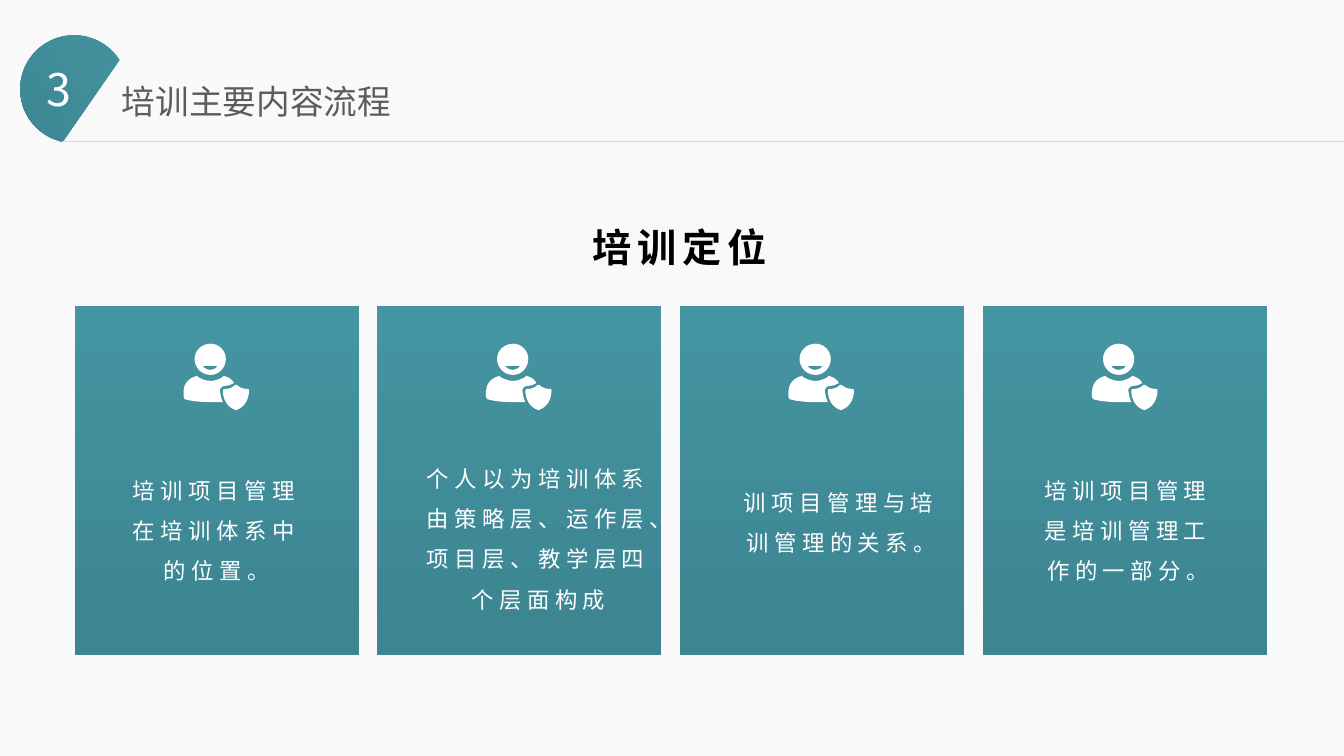
from dataclasses import dataclass

from lxml import etree
from pptx import Presentation
from pptx.dml.color import RGBColor
from pptx.dml.fill import FillFormat
from pptx.enum.shapes import MSO_CONNECTOR, MSO_SHAPE
from pptx.enum.text import MSO_ANCHOR, MSO_AUTO_SIZE, PP_ALIGN
from pptx.oxml.ns import qn
from pptx.shapes.autoshape import Shape
from pptx.slide import Slide
from pptx.util import Pt

CHORD, RECTANGLE = MSO_SHAPE.CHORD, MSO_SHAPE.RECTANGLE
STRAIGHT = MSO_CONNECTOR.STRAIGHT
LEFT, CENTER = PP_ALIGN.LEFT, PP_ALIGN.CENTER
TOP = MSO_ANCHOR.TOP
GROW = MSO_AUTO_SIZE.SHAPE_TO_FIT_TEXT

PX = 9144  # EMU per px, 100 px to the inch
SLIDE_WIDTH, SLIDE_HEIGHT = 1333, 750
TITLE_ONLY = 5

Point = tuple[int, int]


@dataclass(frozen=True)
class Theme:
    font: str = "Noto Sans CJK JP"
    background: str = "F9F9F9"
    teal: tuple[str, str] = ("4594A1", "3C8591")
    title: tuple[str, str] = ("5C5C5C", "2F2F31")
    rule: str = "D9D9D9"
    white: str = "FFFFFF"
    black: str = "000000"
    title_size: int = 24
    number_size: int = 32
    heading_size: int = 28
    caption_size: int = 16
    tracking: int = 4
    rule_width: float = 0.5


@dataclass(frozen=True)
class Box:
    left: int
    top: int
    width: int
    height: int

    def emu(self) -> tuple[int, int, int, int]:
        return self.left * PX, self.top * PX, self.width * PX, self.height * PX


@dataclass(frozen=True)
class TextStyle:
    size: int
    color: str | tuple[str, str]
    align: PP_ALIGN = LEFT
    line_spacing: float = 1.0
    bold: bool = False
    tracking: int = 0


@dataclass(frozen=True)
class Card:
    caption: str
    caption_box: Box


@dataclass(frozen=True)
class Contour:
    """A closed outline: a start, then (control, control, end) curves or (end,) lines."""
    start: Point
    segments: tuple[tuple[Point, ...], ...]


THEME = Theme()
CAPTION = TextStyle(THEME.caption_size, THEME.white, CENTER, 1.5, tracking=THEME.tracking)
HEADING = TextStyle(THEME.heading_size, THEME.black, CENTER, 1.5, True, THEME.tracking)
NUMBER = TextStyle(THEME.number_size, THEME.white)
TITLE = TextStyle(THEME.title_size, THEME.title)

FIRST_CARD = Box(74, 304, 282, 346)
CARDS_SPAN = 901  # from the first card's left to the last card's left
ICON_OFFSET, ICON_TOP = 108, 341
CARDS = (
    Card("培训项目管理在培训体系中的位置。", Box(109, 455, 212, 127)),
    Card("个人以为培训体系由策略层、运作层、项目层、教学层四个层面构成", Box(410, 443, 248, 167)),
    Card("训项目管理与培训管理的关系。", Box(725, 467, 219, 87)),
    Card("培训项目管理是培训管理工作的一部分。", Box(1013, 455, 212, 127)),
)

HEAD = Contour((27, 31), (
    ((35, 31), (42, 24), (42, 15)), ((42, 7), (35, 0), (27, 0)),
    ((18, 0), (11, 7), (11, 15)), ((11, 24), (18, 31), (27, 31)),
))
SMILE = Contour((34, 22), (
    ((33, 24), (30, 26), (27, 26)), ((23, 26), (20, 24), (19, 22)), ((34, 22),),
))
SHIELD = Contour((65, 46), (
    ((65, 55), (61, 63), (52, 66)), ((43, 63), (39, 55), (39, 46)),
    ((39, 45), (40, 45), (40, 45)), ((45, 45), (48, 44), (51, 41)),
    ((52, 41), (52, 41), (53, 41)), ((56, 44), (60, 45), (64, 45)),
    ((64, 45), (65, 45), (65, 46)),
))
BODY = Contour((36, 46), (
    ((37, 51), (37, 54), (39, 58)), ((35, 58), (31, 58), (27, 58)),
    ((12, 58), (4, 56), (1, 55)), ((1, 54), (0, 53), (0, 53)),
    ((0, 47),), ((0, 40), (6, 33), (14, 32)),
    ((14, 32), (14, 32), (14, 33)), ((18, 35), (22, 37), (27, 37)),
    ((31, 37), (36, 35), (39, 33)), ((39, 32), (40, 32), (40, 32)),
    ((44, 33), (48, 35), (50, 39)), ((50, 39), (50, 39), (50, 39)),
    ((47, 41), (44, 42), (41, 42)), ((41, 42), (41, 42), (41, 42)),
    ((40, 42),), ((39, 42), (38, 43), (38, 43)), ((37, 44), (36, 45), (36, 46)),
))
PERSON_ICON = (HEAD, SMILE, SHIELD, BODY)


def paint(fill: FillFormat, color: str | tuple[str, str], angle: int = 270) -> None:
    """Fill with one colour, or with a gradient for a pair of colours."""
    if isinstance(color, str):
        fill.solid()
        fill.fore_color.rgb = RGBColor.from_string(color)
        return
    fill.gradient()
    fill.gradient_angle = angle
    for stop, stop_color in zip(fill.gradient_stops, color):
        stop.color.rgb = RGBColor.from_string(stop_color)


def apply_format(target: object, values: dict[str, object]) -> None:
    for name, value in values.items():
        setattr(target, name, value)


def write_text(shape: Shape, text: str, style: TextStyle) -> None:
    frame = shape.text_frame
    apply_format(frame, {"word_wrap": True, "auto_size": GROW, "vertical_anchor": TOP})
    paragraph = frame.paragraphs[0]
    apply_format(paragraph, {"alignment": style.align, "line_spacing": style.line_spacing})
    run = paragraph.add_run()
    run.text = text
    apply_format(run.font, {"size": Pt(style.size), "bold": style.bold, "name": THEME.font})
    paint(run.font.fill, style.color, angle=180)
    properties = run._r.get_or_add_rPr()
    etree.SubElement(properties, qn("a:ea"), typeface=THEME.font)
    if style.tracking:
        properties.set("spc", str(style.tracking * 100))


def add_text(slide: Slide, box: Box, text: str, style: TextStyle) -> None:
    write_text(slide.shapes.add_textbox(*box.emu()), text, style)


def add_teal_shape(slide: Slide, kind: MSO_SHAPE, box: Box, rotation: float = 0) -> None:
    shape = slide.shapes.add_shape(kind, *box.emu())
    shape.rotation = rotation
    shape.shadow.inherit = False
    shape.line.fill.background()
    paint(shape.fill, THEME.teal)


def bend_segments(icon: Shape, segments: list[tuple[Point, ...]]) -> None:
    """Turn the straight segments that have control points into cubic curves."""
    for element, segment in zip(list(icon._element.iter(qn("a:lnTo"))), segments):
        controls = segment[:-1]
        if controls:
            element.tag = qn("a:cubicBezTo")
        for position, (x, y) in enumerate(controls):
            element.insert(position, etree.Element(qn("a:pt"), x=str(x), y=str(y)))


def add_person_icon(slide: Slide, left: int, top: int) -> None:
    builder = slide.shapes.build_freeform(*PERSON_ICON[0].start, scale=PX)
    for index, contour in enumerate(PERSON_ICON):
        if index:
            builder.move_to(*contour.start)
        builder.add_line_segments([segment[-1] for segment in contour.segments], close=True)
    icon = builder.convert_to_shape(left * PX, top * PX)
    bend_segments(icon, [segment for contour in PERSON_ICON for segment in contour.segments])
    icon.shadow.inherit = False
    icon.line.fill.background()
    paint(icon.fill, THEME.white)


def add_header(slide: Slide) -> None:
    add_teal_shape(slide, CHORD, Box(20, 35, 107, 107), rotation=57.3)
    rule = slide.shapes.add_connector(STRAIGHT, 62 * PX, 140 * PX, SLIDE_WIDTH * PX, 140 * PX)
    rule.line.width = Pt(THEME.rule_width)
    paint(rule.line.fill, THEME.rule)
    etree.SubElement(rule._element.spPr, qn("a:effectLst"))
    title = slide.shapes.title
    title_place = zip(("left", "top", "width", "height"), Box(111, 75, 419, 50).emu())
    apply_format(title, dict(title_place))
    write_text(title, "培训主要内容流程", TITLE)
    add_text(slide, Box(36, 56, 52, 64), "3", NUMBER)


def add_card(slide: Slide, index: int, card: Card) -> None:
    left = FIRST_CARD.left + CARDS_SPAN * index // (len(CARDS) - 1)
    box = Box(left, FIRST_CARD.top, FIRST_CARD.width, FIRST_CARD.height)
    add_teal_shape(slide, RECTANGLE, box)
    add_person_icon(slide, left + ICON_OFFSET, ICON_TOP)
    add_text(slide, card.caption_box, card.caption, CAPTION)


def main() -> None:
    presentation = Presentation()
    presentation.slide_width = SLIDE_WIDTH * PX
    presentation.slide_height = SLIDE_HEIGHT * PX
    slide = presentation.slides.add_slide(presentation.slide_layouts[TITLE_ONLY])
    paint(slide.background.fill, THEME.background)
    add_header(slide)
    add_text(slide, Box(553, 193, 242, 73), "培训定位", HEADING)
    for index, card in enumerate(CARDS):
        add_card(slide, index, card)
    presentation.save("out.pptx")


if __name__ == "__main__":
    main()
